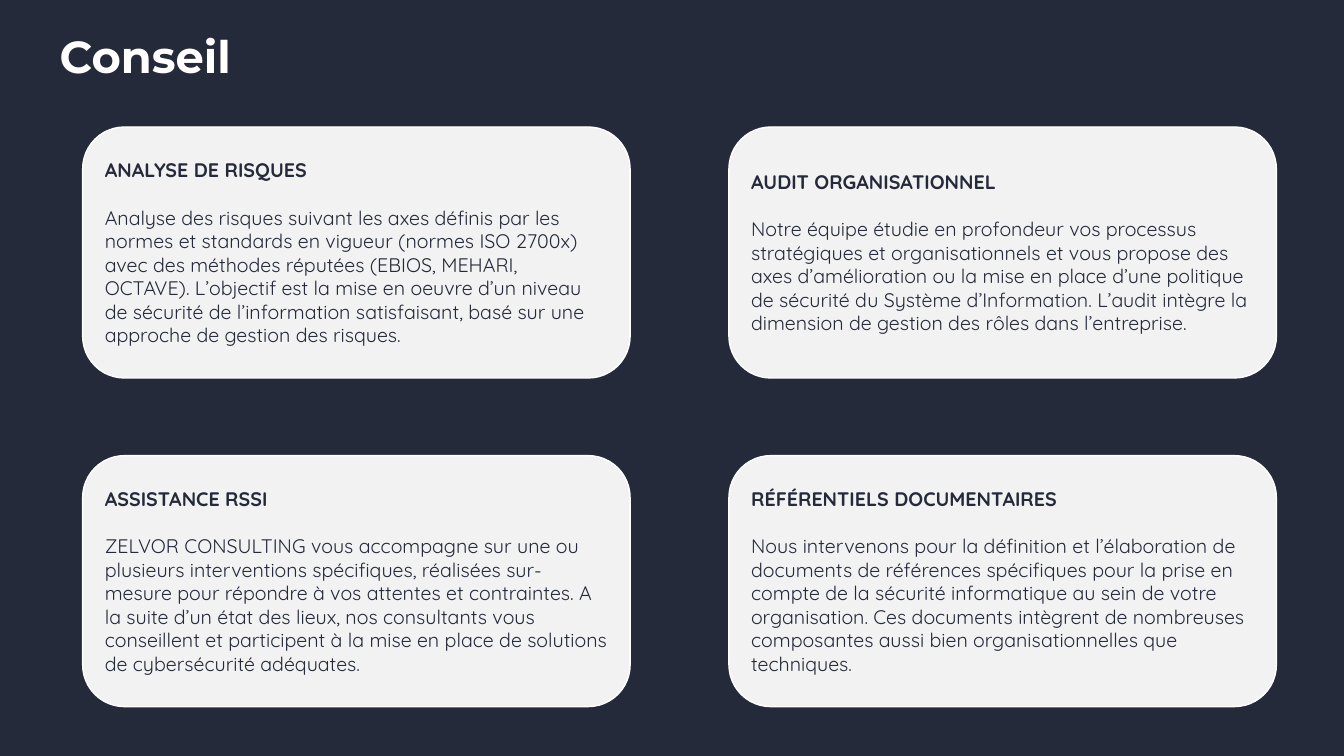
import pptx
import pptx.util
import pptx.dml.color
import pptx.enum.shapes
import pptx.enum.text
from dataclasses import dataclass


@dataclass(frozen=True)
class Theme:
    night: str = "252A3B"
    card: str = "F2F2F2"
    white: str = "FFFFFF"
    title_font: str = "Montserrat"
    body_font: str = "Quicksand"
    title_size: int = 32
    body_size: int = 14
    heading_gap: float = 16.8


theme = Theme()
Inches = pptx.util.Inches
Pt = pptx.util.Pt


def rgb(value):
    return pptx.dml.color.RGBColor.from_string(value)


def style(paragraph, family, size, color, bold):
    paragraph.alignment = pptx.enum.text.PP_ALIGN.LEFT
    paragraph.font.name = family
    paragraph.font.size = Pt(size)
    paragraph.font.color.rgb = rgb(color)
    paragraph.font.bold = bold


services = [
    ("ANALYSE DE RISQUES",
     "Analyse des risques suivant les axes définis par les normes et standards en vigueur "
     "(normes ISO 2700x) avec des méthodes réputées (EBIOS, MEHARI, OCTAVE). L’objectif est "
     "la mise en oeuvre d’un niveau de sécurité de l’information satisfaisant, basé sur une "
     "approche de gestion des risques."),
    ("AUDIT ORGANISATIONNEL",
     "Notre équipe étudie en profondeur vos processus stratégiques et organisationnels et vous "
     "propose des axes d’amélioration ou la mise en place d’une politique de sécurité du Système "
     "d’Information. L’audit intègre la dimension de gestion des rôles dans l’entreprise."),
    ("ASSISTANCE RSSI",
     "ZELVOR CONSULTING vous accompagne sur une ou plusieurs interventions spécifiques, réalisées "
     "sur-mesure pour répondre à vos attentes et contraintes. A la suite d’un état des lieux, nos "
     "consultants vous conseillent et participent à la mise en place de solutions de "
     "cybersécurité adéquates."),
    ("RÉFÉRENTIELS DOCUMENTAIRES",
     "Nous intervenons pour la définition et l’élaboration de documents de références spécifiques "
     "pour la prise en compte de la sécurité informatique au sein de votre organisation. Ces "
     "documents intègrent de nombreuses composantes aussi bien organisationnelles que techniques."),
]

deck = pptx.Presentation()
deck.slide_width = Inches(13.33)
deck.slide_height = Inches(7.5)
slide = deck.slides.add_slide(deck.slide_layouts.get_by_name("Title Only"))
slide.background.fill.solid()
slide.background.fill.fore_color.rgb = rgb(theme.night)

title = slide.shapes.title
title.left, title.top = Inches(0.59), Inches(0.23)
title.width, title.height = Inches(11.5), Inches(0.89)
title.text_frame.text = "Conseil"
title.text_frame.margin_left = title.text_frame.margin_right = 0
title.text_frame.vertical_anchor = pptx.enum.text.MSO_ANCHOR.TOP
style(title.text_frame.paragraphs[0], theme.title_font, theme.title_size, theme.white, True)

grid_left, grid_top = 0.82, 1.26
column_step, row_step = 6.41, 3.26
card_width, card_height = 5.43, 2.49

for index, (heading_text, description_text) in enumerate(services):
    row, column = divmod(index, 2)
    card = slide.shapes.add_shape(
        pptx.enum.shapes.MSO_SHAPE.ROUNDED_RECTANGLE,
        Inches(grid_left + column * column_step), Inches(grid_top + row * row_step),
        Inches(card_width), Inches(card_height))
    card.shadow.inherit = False
    card.fill.solid()
    card.fill.fore_color.rgb = rgb(theme.card)
    card.line.color.rgb = rgb(theme.white)
    card.line.width = Pt(1)

    content = card.text_frame
    content.word_wrap = True
    content.vertical_anchor = pptx.enum.text.MSO_ANCHOR.MIDDLE
    heading = content.paragraphs[0]
    heading.text = heading_text
    heading.space_after = Pt(theme.heading_gap)
    description = content.add_paragraph()
    description.text = description_text
    style(heading, theme.body_font, theme.body_size, theme.night, True)
    style(description, theme.body_font, theme.body_size, theme.night, False)

deck.save("out.pptx")
